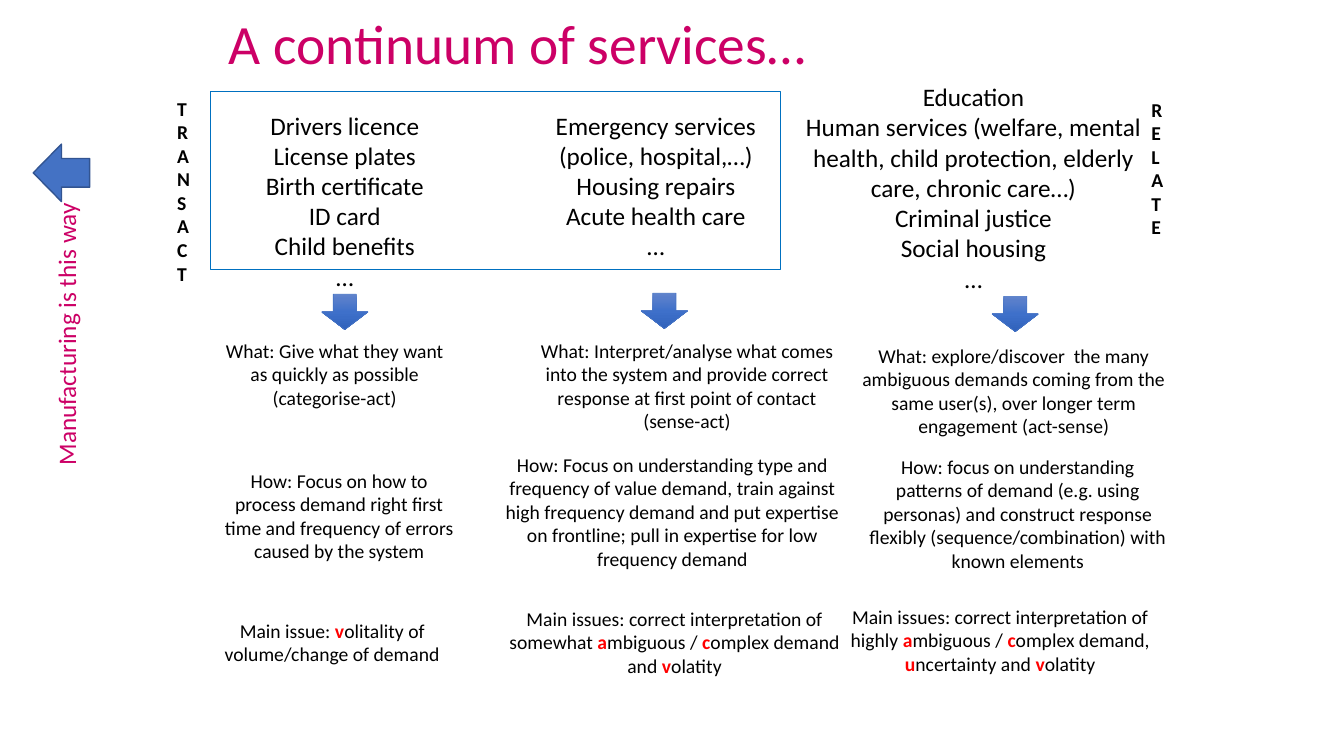
from copy import deepcopy
from dataclasses import dataclass

from pptx import Presentation
from pptx.dml.color import RGBColor
from pptx.enum.shapes import MSO_SHAPE
from pptx.enum.text import MSO_ANCHOR, MSO_AUTO_SIZE, PP_ALIGN
from pptx.oxml.ns import qn
from pptx.util import Inches, Pt

LEFT, CENTER = PP_ALIGN.LEFT, PP_ALIGN.CENTER
MIDDLE = MSO_ANCHOR.MIDDLE
FIT_NONE, FIT_SHAPE = MSO_AUTO_SIZE.NONE, MSO_AUTO_SIZE.SHAPE_TO_FIT_TEXT
RECTANGLE = MSO_SHAPE.RECTANGLE
DOWN_ARROW, LEFT_ARROW = MSO_SHAPE.DOWN_ARROW, MSO_SHAPE.LEFT_ARROW


@dataclass(frozen=True)
class Theme:
    font: str = "Calibri"
    title_size: float = 39.6
    service_size: float = 18
    detail_size: float = 14
    pink: str = "CC0066"
    black: str = "000000"
    red: str = "FF0000"
    frame: str = "0070C0"
    blue: str = "4472C4"
    dark_blue: str = "325491"
    gradient: tuple = ((0, "6183CB"), (0.5, "3E70CA"), (1, "3062BB"))


THEME = Theme()

presentation = Presentation()
presentation.slide_width = Inches(13.33)
presentation.slide_height = Inches(7.5)
slide = presentation.slides.add_slide(presentation.slide_layouts[5])


def add_run(paragraph, text, size, color, bold=False):
    run = paragraph.add_run()
    run.text = text
    run.font.name = THEME.font
    run.font.size = Pt(size)
    run.font.bold = bold
    run.font.color.rgb = RGBColor.from_string(color)


def add_text(box, lines, size, color=THEME.black, align=CENTER, bold=False, wrap=True, indented=False):
    shape = slide.shapes.add_textbox(*map(Inches, box))
    frame = shape.text_frame
    frame.word_wrap = wrap
    frame.auto_size = FIT_SHAPE
    for index, line in enumerate(lines):
        paragraph = frame.paragraphs[0] if index == 0 else frame.add_paragraph()
        paragraph.alignment = align
        if indented:
            paragraph.level = 2
            paragraph._p.get_or_add_pPr().set("marL", str(Inches(1)))
        for part, text in enumerate(line.split("|")):
            marked = part % 2 == 1
            add_run(paragraph, text, size, THEME.red if marked else color, bold or marked)
    return shape


title = slide.shapes.title
title.left, title.top, title.width, title.height = map(Inches, (2.17, 0.11, 9, 0.71))
title.text_frame.vertical_anchor = MIDDLE
title.text_frame.word_wrap = True
title.text_frame.auto_size = FIT_NONE
heading = title.text_frame.paragraphs[0]
heading.alignment = LEFT
heading.line_spacing = 0.9
add_run(heading, "A continuum of services…", THEME.title_size, THEME.pink)

services = [
    ((2.43, 1.04, 1.98, 2.22), True,
     ["Drivers licence", "License plates", "Birth certificate", "ID card", "Child benefits", "…"]),
    ((5.4, 1.04, 2.21, 1.92), False,
     ["Emergency services", "(police, hospital,…)", "Housing repairs", "Acute health care", "…"]),
    ((7.85, 0.76, 3.61, 2.52), True,
     ["Education",
      "Human services (welfare, mental health, child protection, elderly care, chronic care…)",
      "Criminal justice", "Social housing", "…"]),
]
for box, wrap, lines in services:
    add_text(box, lines, THEME.service_size, wrap=wrap)

details = [
    ((2.09, 3.31, 2.46, 0.81), False,
     "What: Give what they want as quickly as possible (categorise-act)"),
    ((1.13, 4.6, 3.47, 1.04), True,
     "How: Focus on how to process demand right first time and frequency of errors caused by the system"),
    ((0.97, 6.09, 3.65, 0.57), True,
     "Main issue: |v|olitality of volume/change of demand"),
    ((5.13, 3.31, 3.37, 1.04), False,
     "What: Interpret/analyse what comes into the system and provide correct response "
     "at first point of contact (sense-act)"),
    ((4.87, 4.44, 3.6, 1.28), False,
     "How: Focus on understanding type and frequency of value demand, train against high frequency "
     "demand and put expertise on frontline; pull in expertise for low frequency demand"),
    ((3.95, 5.97, 4.48, 0.81), True,
     "Main issues: correct interpretation of somewhat |a|mbiguous / |c|omplex demand and |v|olatity"),
    ((8.32, 3.36, 3.47, 1.04), False,
     "What: explore/discover  the many ambiguous demands coming from the same user(s), "
     "over longer term engagement (act-sense)"),
    ((8.52, 4.46, 3.15, 1.28), False,
     "How: focus on understanding patterns of demand (e.g. using personas) and construct response "
     "flexibly (sequence/combination) with known elements"),
    ((7.18, 5.95, 4.48, 0.81), True,
     "Main issues: correct interpretation of highly |a|mbiguous / |c|omplex demand, "
     "|u|ncertainty and |v|olatity"),
]
for box, indented, text in details:
    add_text(box, [text], THEME.detail_size, indented=indented)

for left, top in [(3.19, 2.92), (6.36, 2.91), (9.84, 2.94)]:
    arrow = slide.shapes.add_shape(DOWN_ARROW, Inches(left), Inches(top), Inches(0.46), Inches(0.35))
    arrow.shadow.inherit = False
    arrow.fill.gradient()
    arrow.fill.gradient_angle = 270
    stop_list = arrow._element.spPr.find(".//" + qn("a:gsLst"))
    stop_list.append(deepcopy(stop_list[0]))
    for stop, (position, color) in zip(arrow.fill.gradient_stops, THEME.gradient):
        stop.position = position
        stop.color.rgb = RGBColor.from_string(color)
    arrow.line.color.rgb = RGBColor.from_string(THEME.blue)
    arrow.line.width = Pt(0.5)

service_frame = slide.shapes.add_shape(RECTANGLE, Inches(2.09), Inches(0.91), Inches(5.65), Inches(1.76))
service_frame.shadow.inherit = False
service_frame.fill.background()
service_frame.line.color.rgb = RGBColor.from_string(THEME.frame)
service_frame.line.width = Pt(0.5)

for box, word in [((1.66, 0.91, 0.34, 1.99), "TRANSACT"), ((11.32, 0.92, 0.32, 1.51), "RELATE")]:
    add_text(box, word, THEME.detail_size, align=LEFT, bold=True, wrap=False)

manufacturing = add_text((-0.79, 3.07, 2.89, 0.4), ["Manufacturing is this way"],
                         THEME.service_size, THEME.pink, LEFT, wrap=False)
manufacturing.rotation = 270

manufacturing_arrow = slide.shapes.add_shape(LEFT_ARROW, Inches(0.33), Inches(1.43), Inches(0.56), Inches(0.57))
manufacturing_arrow.shadow.inherit = False
manufacturing_arrow.fill.solid()
manufacturing_arrow.fill.fore_color.rgb = RGBColor.from_string(THEME.blue)
manufacturing_arrow.line.color.rgb = RGBColor.from_string(THEME.dark_blue)
manufacturing_arrow.line.width = Pt(1)

presentation.save("out.pptx")
